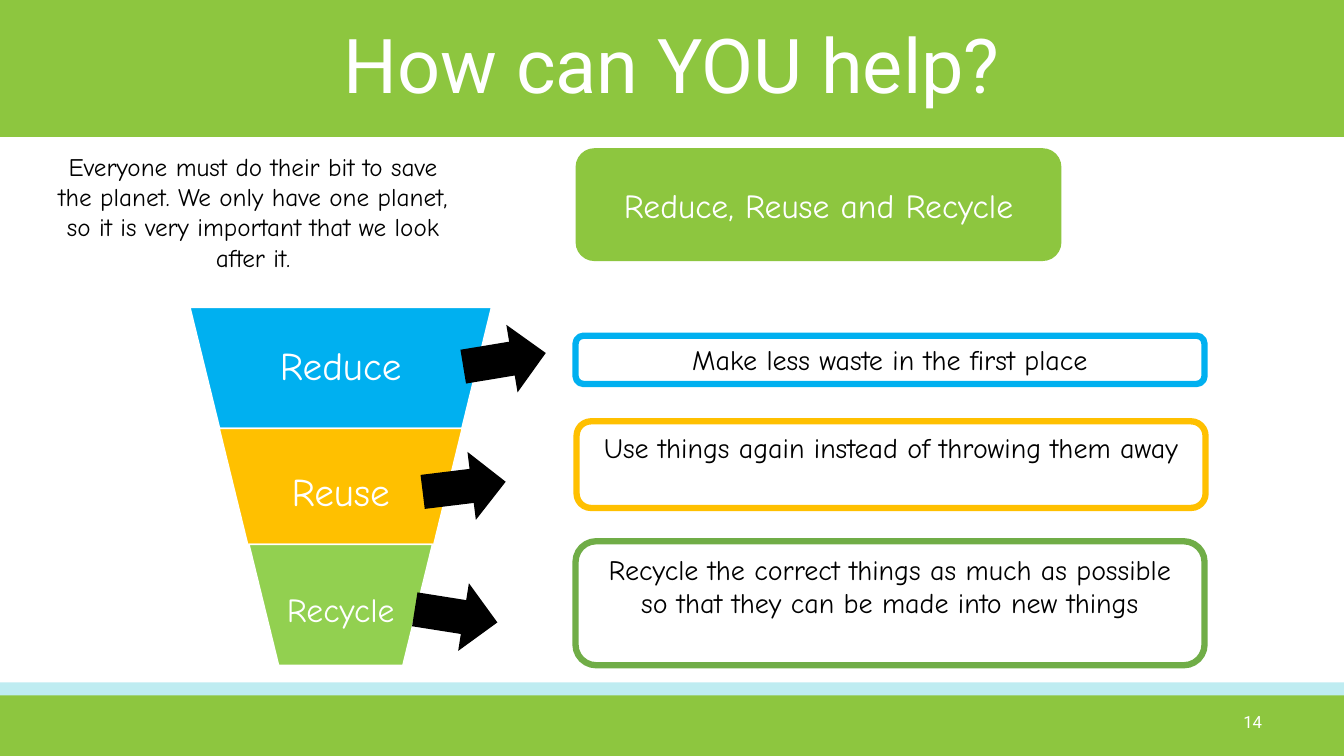
"""Build the "How can YOU help?" slide on a grid of tenth-of-an-inch columns and rows."""
from dataclasses import dataclass

from lxml import etree
from pptx import Presentation
from pptx.dml.color import RGBColor
from pptx.enum.shapes import MSO_SHAPE
from pptx.enum.text import MSO_ANCHOR, PP_ALIGN
from pptx.oxml.ns import qn
from pptx.shapes.autoshape import Shape
from pptx.util import Inches, Pt

RECT, ROUNDED = MSO_SHAPE.RECTANGLE, MSO_SHAPE.ROUNDED_RECTANGLE
TRAPEZOID, ARROW = MSO_SHAPE.TRAPEZOID, MSO_SHAPE.RIGHT_ARROW
TOP, MIDDLE = MSO_ANCHOR.TOP, MSO_ANCHOR.MIDDLE
CENTER, RIGHT = PP_ALIGN.CENTER, PP_ALIGN.RIGHT
UNIT = Inches(0.1)
COLS, ROWS = 133.33, 75
HEAD_ROWS = 13.6
BODY_FONT, HEAD_FONT = "Comic Neue", "Roboto"
GREEN, WHITE, BLACK = "8DC63F", "FFFFFF", "000000"
FUNNEL_CENTER, FUNNEL_TOP, TAPER = 33.8, 30.5, 0.245
ARROW_SIZE = (8.3, 6.8)


@dataclass
class Area:
    """A rectangle in grid columns and rows."""
    col: float
    row: float
    cols: float
    rows: float


@dataclass
class Tier:
    """One funnel tier with its arrow and its advice box."""
    label: str
    size: int
    fill: str
    cols: float
    rows: float
    label_row: float
    arrow_col: float
    arrow_row: float
    turn: float
    advice: str
    box: Area
    border: str


TIERS = [
    Tier("Reduce", 28, "00B0F0", 29.9, 12, 36.5, 45.9, 32.3, -9.4,
         "Make less waste in the first place", Area(57.1, 33.3, 62.4, 4.8), "00B0F0"),
    Tier("Reuse", 28, "FFC000", 24.1, 11.5, 48.95, 41.9, 44.9, -7,
         "Use things again instead of throwing them away",
         Area(57.2, 41.8, 62.4, 8.6), "FFC000"),
    Tier("Recycle", 24, "92D050", 18.2, 12, 60.65, 41.1, 57.7, 9,
         "Recycle the correct things as much as possible so that they can be made into new things",
         Area(57.1, 53.7, 62.4, 12.3), "70AD47"),
]


def color(value: str) -> RGBColor:
    """Turn a hex string into a colour."""
    return RGBColor.from_string(value)


def place(area: Area) -> list[int]:
    """Turn a grid area into left, top, width and height."""
    return [round(n * UNIT) for n in (area.col, area.row, area.cols, area.rows)]


def add_shape(s, kind: int, area: Area, fill: str = "", line: str = "",
              width: float = 1, turn: float = 0) -> Shape:
    """Draw a preset shape, without fill or line where no colour is given."""
    sp = s.shapes.add_shape(kind, *place(area))
    sp.shadow.inherit = False
    sp.rotation = turn
    if fill:
        sp.fill.solid()
        sp.fill.fore_color.rgb = color(fill)
    else:
        sp.fill.background()
    if line:
        sp.line.color.rgb = color(line)
        sp.line.width = Pt(width)
    else:
        sp.line.fill.background()
    return sp


def write(sp: Shape, text: str, size: float, ink: str, font: str = BODY_FONT,
          anchor: int = MIDDLE, align: int = CENTER, spacing: float = 1) -> None:
    """Set and format the text of a shape."""
    tf = sp.text_frame
    tf.word_wrap = True
    tf.vertical_anchor = anchor
    tf.text = text
    p = tf.paragraphs[0]
    p.alignment = align
    p.line_spacing = spacing
    r = p.runs[0]
    r.font.name = font
    r.font.size = Pt(size)
    r.font.color.rgb = color(ink)


def add_text(s, area: Area, *args, **kwargs) -> None:
    """Add a text box and write in it."""
    write(s.shapes.add_textbox(*place(area)), *args, **kwargs)


def set_opacity(sp: Shape, percent: int) -> None:
    """Make a solid fill partly transparent."""
    fill = sp.fill._xPr.find(qn("a:solidFill"))
    etree.SubElement(fill[0], qn("a:alpha")).set("val", str(percent * 1000))


def draw_frame(s) -> None:
    """Draw the header, the footer, the title and the slide number."""
    set_opacity(add_shape(s, RECT, Area(0, 67.7, COLS, 2.4), "20BFD0"), 29)
    head = Area(0, 0, COLS, HEAD_ROWS)
    add_shape(s, RECT, head, GREEN)
    add_shape(s, RECT, Area(0, 69, COLS, ROWS - 69), GREEN)
    add_text(s, head, "How can YOU help?", 54, WHITE, HEAD_FONT, spacing=0.9)
    add_text(s, Area(96.2, 69.6, 30, 4), "14", 12, WHITE, HEAD_FONT, align=RIGHT)


def draw_funnel(s) -> None:
    """Stack the tiers and draw their labels, arrows and advice boxes."""
    row = FUNNEL_TOP
    for tier in TIERS:
        area = Area(FUNNEL_CENTER - tier.cols / 2, row, tier.cols, tier.rows)
        sp = add_shape(s, TRAPEZOID, area, tier.fill, WHITE, turn=180)
        sp.adjustments[0] = TAPER
        label = Area(FUNNEL_CENTER - 9, tier.label_row - 5, 18, 10)
        add_text(s, label, tier.label, tier.size, WHITE, spacing=0.9)
        row += tier.rows
    for tier in TIERS:
        sp = add_shape(s, ROUNDED, tier.box, line=tier.border, width=4.5)
        write(sp, tier.advice, 20, BLACK, anchor=TOP)
        add_shape(s, ARROW, Area(tier.arrow_col, tier.arrow_row, *ARROW_SIZE),
                  BLACK, turn=tier.turn)


def main() -> None:
    """Build and save the slide."""
    prs = Presentation()
    prs.slide_width, prs.slide_height = round(COLS * UNIT), ROWS * UNIT
    s = prs.slides.add_slide(prs.slide_layouts[6])
    draw_frame(s)
    banner = add_shape(s, ROUNDED, Area(57.1, 14.7, 48.2, 11.2), GREEN)
    write(banner, "Reduce, Reuse and Recycle", 24, WHITE)
    add_text(s, Area(4.2, 14.5, 41.8, 13.1),
             "Everyone must do their bit to save the planet. We only have one planet, "
             "so it is very important that we look after it.", 18, BLACK, anchor=TOP)
    draw_funnel(s)
    prs.save("out.pptx")


if __name__ == "__main__":
    main()
